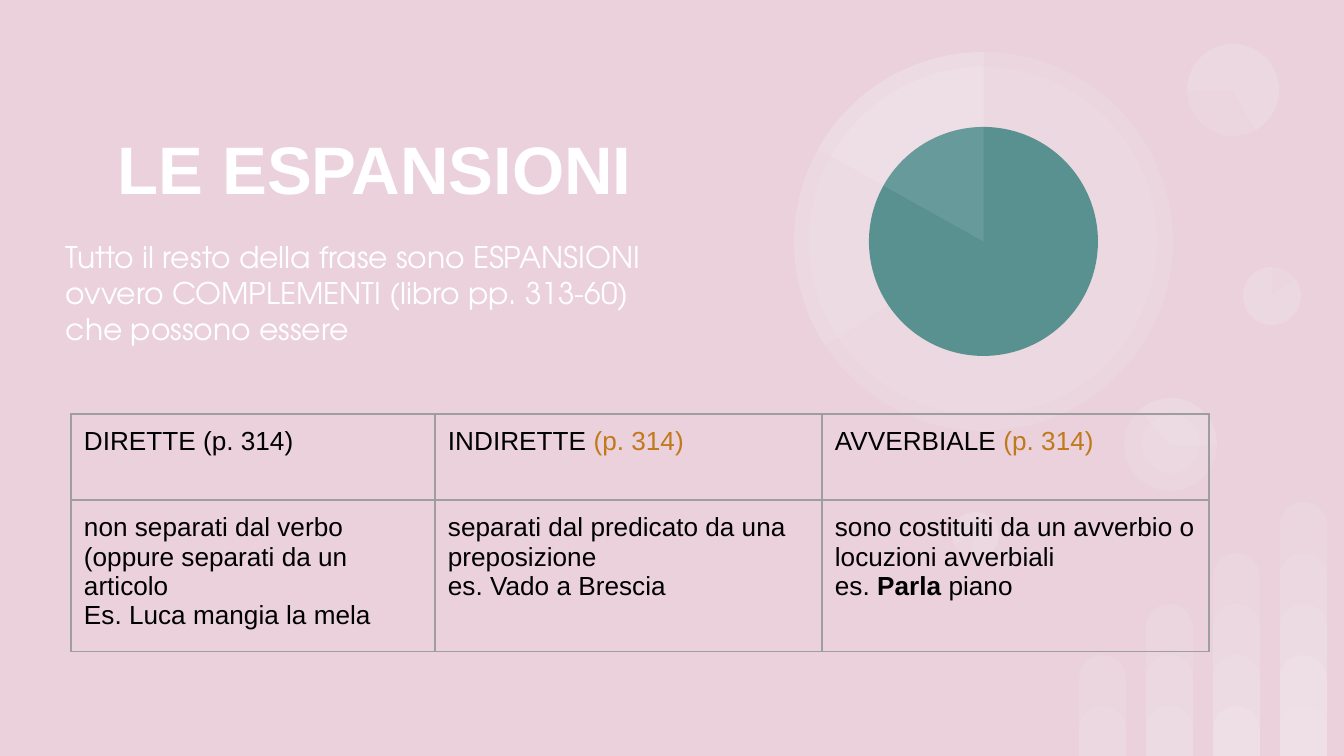
"""Builds the slide on the expansions of the sentence."""
from lxml.etree import SubElement
from pptx import Presentation
from pptx.dml.color import RGBColor
from pptx.enum.shapes import MSO_SHAPE as Shape
from pptx.enum.text import MSO_ANCHOR as Anchor
from pptx.oxml.ns import qn
from pptx.util import Emu, Pt

EMU_PER_PX = 914400 / 134.4
WHITE, BLACK, PINK, TEAL, OCHRE, GREY = "FFFFFF", "000000", "EAD1DC", "599191", "C0791B", "9E9E9E"
INSET = 13


def px(length):
    return Emu(round(length * EMU_PER_PX))


def color(value):
    return RGBColor.from_string(value)


class Painter:
    def __init__(self, slide, font="Arial"):
        self.slide = slide
        self.font = font

    def shape(self, kind, left, top, width, height, fill=WHITE, alpha=9, angles=(), rotation=0):
        shape = self.slide.shapes.add_shape(kind, px(left), px(top), px(width), px(height))
        shape.shadow.inherit = False
        shape.rotation = rotation
        for index, value in enumerate(angles):
            shape.adjustments[index] = value
        shape.fill.solid()
        shape.fill.fore_color.rgb = color(fill)
        shape.line.fill.background()
        if alpha < 100:
            tint = shape.element.spPr.find(qn("a:solidFill"))[0]
            SubElement(tint, qn("a:alpha"), val=str(alpha * 1000))

    def disc(self, left, top, size, **style):
        self.shape(Shape.OVAL, left, top, size, size, **style)

    def wedge(self, left, top, size, start, end=270, rotation=0):
        angles = [degrees * 0.6 for degrees in (start, end)]
        self.shape(Shape.PIE, left, top, size, size, angles=angles, rotation=rotation)

    def fill_frame(self, frame, paragraphs, size, font=None):
        frame.word_wrap = True
        frame.margin_left = frame.margin_right = px(INSET)
        frame.margin_top = frame.margin_bottom = px(INSET)
        self.add_runs(frame, paragraphs, size, font)

    def add_runs(self, frame, paragraphs, size, font=None):
        for index, runs in enumerate(paragraphs):
            para = frame.paragraphs[0] if index == 0 else frame.add_paragraph()
            for text, tone, bold in runs:
                span = para.add_run()
                span.text = text
                span.font.name = font or self.font
                span.font.size = Pt(size)
                span.font.bold = bold
                span.font.color.rgb = color(tone)

    def text(self, left, top, width, height, paragraphs, size, font=None, anchor=Anchor.TOP):
        box = self.slide.shapes.add_textbox(px(left), px(top), px(width), px(height))
        box.text_frame.vertical_anchor = anchor
        self.fill_frame(box.text_frame, paragraphs, size, font)

    def border(self, cell):
        properties = cell._tc.get_or_add_tcPr()
        for side in ("lnL", "lnR", "lnT", "lnB"):
            line = SubElement(properties, qn(f"a:{side}"), w=str(int(Pt(0.75))))
            fill = SubElement(line, qn("a:solidFill"))
            SubElement(fill, qn("a:srgbClr"), val=GREY)

    def table(self, left, top, widths, heights, rows, size):
        table = self.slide.shapes.add_table(len(heights), len(widths), px(left), px(top),
                                            px(sum(widths)), px(sum(heights))).table
        table.first_row = table.horz_banding = False
        for column, width in zip(table.columns, widths):
            column.width = px(width)
        for row, height, contents in zip(table.rows, heights, rows):
            row.height = px(height)
            for cell, paragraphs in zip(row.cells, contents):
                cell.margin_left = cell.margin_right = px(INSET)
                cell.margin_top = cell.margin_bottom = px(INSET)
                self.border(cell)
                cell.fill.background()
                self.add_runs(cell.text_frame, paragraphs, size)


def plain(text, tone=BLACK):
    return [(text, tone, False)]


def draw_bars(painter):
    for column in range(4):
        for level in range(1, column + 3):
            height = 51 * level - 1
            painter.shape(Shape.ROUND_2_SAME_RECTANGLE, 1079 + 67 * column, 756 - height,
                          47, height, angles=(0.5, 0))


def draw_discs(painter):
    painter.disc(1243, 267, 58)
    painter.wedge(1243, 267, 58, 322.95)
    painter.disc(952, 512, 47)
    painter.wedge(952, 512, 47, 322.95, rotation=196.2)
    painter.disc(1124, 398, 93)
    painter.wedge(1124, 398, 93, 137.41, 270.77, rotation=90)
    painter.disc(1142, 415, 58)
    painter.disc(1187, 44, 92)
    painter.wedge(1187, 44, 92, 322.95, 205.23, rotation=215.9)
    painter.disc(794, 52, 379)
    painter.disc(809, 67, 348)
    painter.wedge(794, 52, 379, 146.69)
    painter.disc(869, 127, 229, fill=TEAL, alpha=100)
    painter.wedge(794, 52, 379, 209.24)


def main():
    deck = Presentation()
    deck.slide_width, deck.slide_height = px(1344), px(756)
    page = deck.slides.add_slide(deck.slide_layouts[6])
    page.background.fill.solid()
    page.background.fill.fore_color.rgb = color(PINK)
    painter = Painter(page)
    draw_bars(painter)
    draw_discs(painter)
    painter.text(105, 30, 625, 276, [[("LE ESPANSIONI", WHITE, True)]], 36, anchor=Anchor.MIDDLE)
    painter.text(53, 226, 625, 102, [
        plain("Tutto il resto della frase sono ESPANSIONI ovvero COMPLEMENTI (libro pp. 313-60)", WHITE),
        plain("che possono essere", WHITE),
    ], 16, font="TeX Gyre Adventor")
    reference = plain("(p. 314)", OCHRE)
    painter.table(71, 414, (364, 387, 387), (86, 145), [
        [
            [plain("DIRETTE (p. 314)")],
            [plain("INDIRETTE ") + reference],
            [plain("AVVERBIALE ") + reference],
        ],
        [
            [plain("non separati dal verbo (oppure separati da un articolo"),
             plain("Es. Luca mangia la mela")],
            [plain("separati dal predicato da una preposizione"), plain("es. Vado a Brescia")],
            [plain("sono costituiti da un avverbio o locuzioni avverbiali"),
             plain("es. ") + [("Parla", BLACK, True)] + plain(" piano")],
        ],
    ], 14)
    deck.save("out.pptx")


if __name__ == "__main__":
    main()
